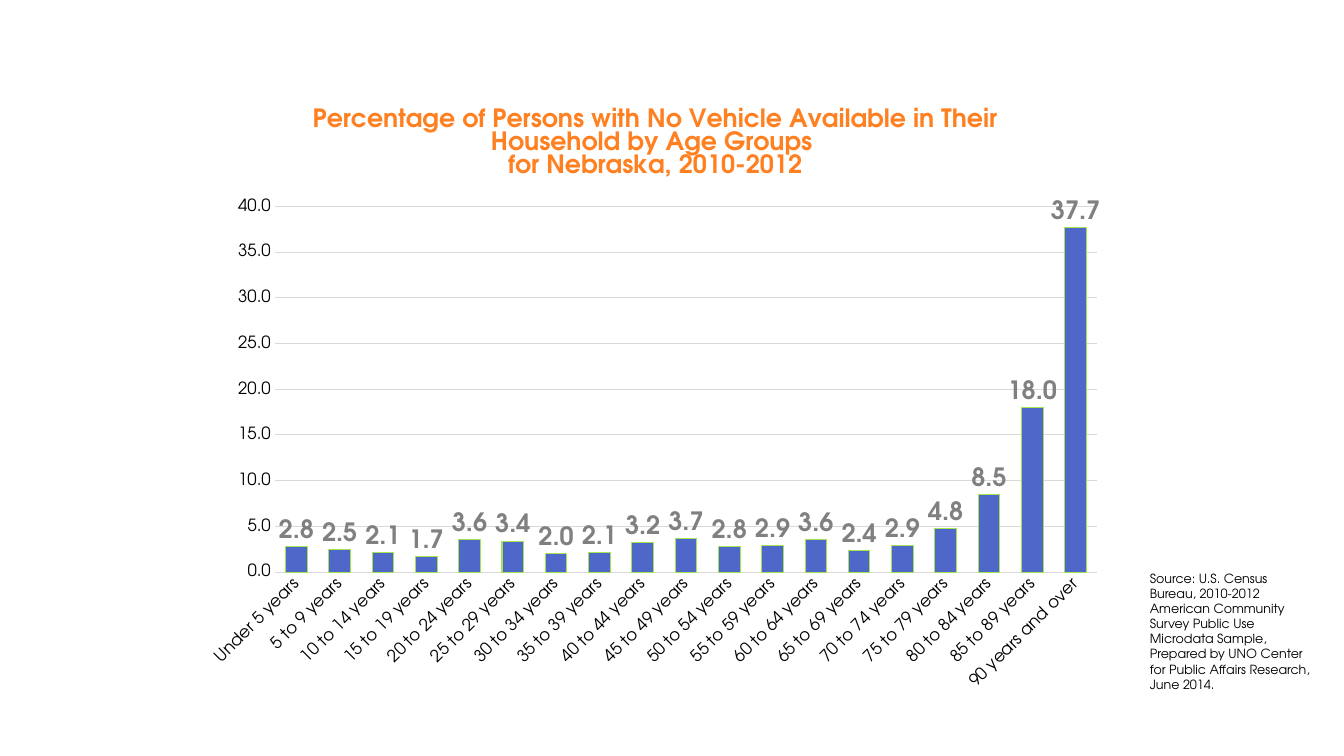
from dataclasses import dataclass
from lxml import etree
from pptx import Presentation
from pptx.chart.data import CategoryChartData as Data
from pptx.dml.color import RGBColor as RGB
from pptx.enum.chart import XL_CHART_TYPE as Kind, XL_LABEL_POSITION as Spot, XL_TICK_MARK as Tick
from pptx.oxml.ns import qn
from pptx.util import Pt


@dataclass(frozen=True)
class Theme:
    face: str = "TeX Gyre Adventor"
    ink: str = "000000"
    title: str = "FF8021"
    label: str = "808080"
    grid: str = "D9D9D9"
    bar: str = "4E67C8"
    edge: str = "A3E550"
    large: int = 18
    mid: int = 12
    small: int = 9
    line: float = 0.75


THEME = Theme()
TITLE = [
    "Percentage of Persons with No Vehicle Available in Their Household by Age Groups ",
    "for Nebraska, 2010-2012",
]
AGES = (
    ["Under 5 years"]
    + [f"{age} to {age + 4} years" for age in range(5, 90, 5)]
    + ["90 years and over"]
)
RATES = [2.8, 2.5, 2.1, 1.7, 3.6, 3.4, 2, 2.1, 3.2, 3.7,
         2.8, 2.9, 3.6, 2.4, 2.9, 4.8, 8.5, 18, 37.7]
SOURCE = (
    "Source: U.S. Census Bureau, 2010-2012 American Community Survey Public Use "
    "Microdata Sample, Prepared by UNO Center for Public Affairs Research, June 2014."
)


def style(font, size, color, bold=False):
    font.name = THEME.face
    font.size = Pt(size)
    font.bold = bold
    font.color.rgb = RGB.from_string(color)


def stroke(line, color):
    line.color.rgb = RGB.from_string(color)
    line.width = Pt(THEME.line)


def place_plot(chart, **parts):
    plot = chart.plots[0]._element.getparent()
    for old in plot.findall(qn("c:layout")):
        plot.remove(old)
    layout = etree.Element(qn("c:layout"))
    manual = etree.SubElement(layout, qn("c:manualLayout"))
    rules = {"layoutTarget": "inner", "xMode": "edge", "yMode": "edge", **parts}
    for name, value in rules.items():
        etree.SubElement(manual, qn(f"c:{name}")).set("val", str(value))
    plot.insert(0, layout)


def add_title(chart):
    chart.has_title = True
    chart.chart_title.include_in_layout = False
    frame = chart.chart_title.text_frame
    frame.text = "\n".join(TITLE)
    for para in frame.paragraphs:
        para.line_spacing = 0.8
        style(para.font, THEME.large, THEME.title, True)
        for run in para.runs:
            style(run.font, THEME.large, THEME.title, True)


def style_axes(chart):
    ages, rates = chart.category_axis, chart.value_axis
    for axis in (ages, rates):
        axis.major_tick_mark = axis.minor_tick_mark = Tick.NONE
        style(axis.tick_labels.font, THEME.mid, THEME.ink)
    stroke(ages.format.line, THEME.grid)
    ages._element.find(qn("c:txPr")).find(qn("a:bodyPr")).set("rot", "-2700000")
    rates.minimum_scale, rates.maximum_scale, rates.major_unit = 0, 40, 5
    rates.format.line.fill.background()
    rates.has_major_gridlines = True
    stroke(rates.major_gridlines.format.line, THEME.grid)
    rates.tick_labels.number_format = "0.0"
    rates.tick_labels.number_format_is_linked = False


def style_bars(plot):
    plot.gap_width, plot.overlap = 100, -24
    plot.vary_by_categories = False
    bars = plot.series[0]
    bars.format.fill.solid()
    bars.format.fill.fore_color.rgb = RGB.from_string(THEME.bar)
    stroke(bars.format.line, THEME.edge)
    labels = bars.data_labels
    labels.show_value = True
    labels.position = Spot.OUTSIDE_END
    labels.number_format = "0.0"
    labels.number_format_is_linked = False
    style(labels.font, THEME.large, THEME.label, True)


def add_rates(slide, left, top, width, height):
    data = Data(number_format="0.0")
    data.categories = AGES
    data.add_series("Series 1", RATES)
    chart = slide.shapes.add_chart(
        Kind.COLUMN_CLUSTERED, Pt(left), Pt(top), Pt(width), Pt(height), data
    ).chart
    chart.has_legend = False
    style(chart.font, 10, THEME.ink)
    add_title(chart)
    style_axes(chart)
    style_bars(chart.plots[0])
    place_plot(chart, x=0.087, y=0.196, w=0.893, h=0.594)


def add_source(slide, left, top, width, height):
    frame = slide.shapes.add_textbox(Pt(left), Pt(top), Pt(width), Pt(height)).text_frame
    frame.word_wrap = True
    frame.text = SOURCE
    style(frame.paragraphs[0].runs[0].font, THEME.small, THEME.ink)


def main():
    deck = Presentation()
    deck.slide_width, deck.slide_height = Pt(960), Pt(540)
    slide = deck.slides.add_slide(deck.slide_layouts[6])
    add_rates(slide, 139, 61.2, 658, 440)
    add_source(slide, 814.3, 404, 131.8, 94.3)
    deck.save("out.pptx")


if __name__ == "__main__":
    main()
